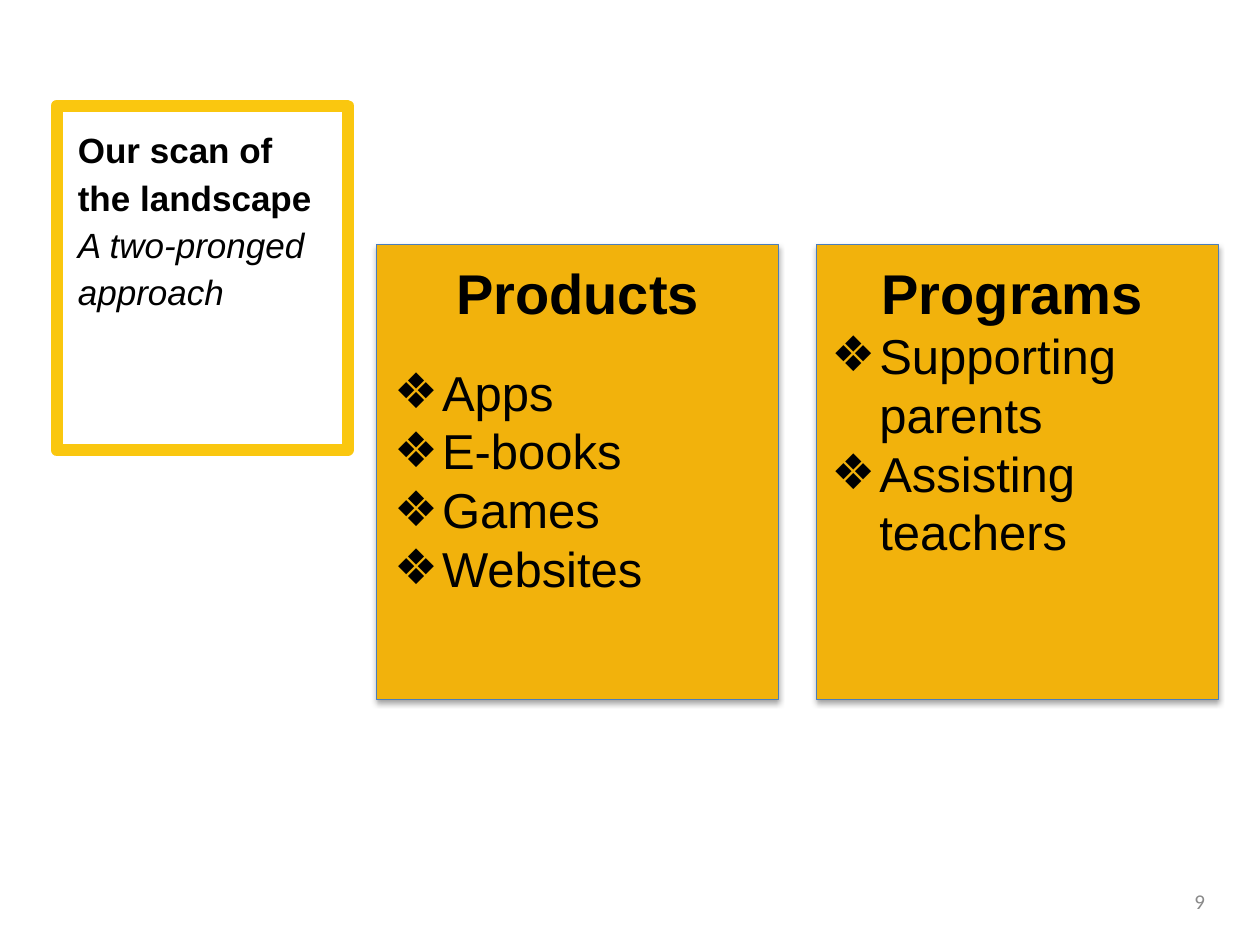
from lxml.etree import SubElement
from pptx import Presentation
from pptx.dml.color import RGBColor
from pptx.enum.shapes import MSO_SHAPE as Shape
from pptx.enum.text import MSO_ANCHOR as Anchor, PP_ALIGN as Align
from pptx.oxml.ns import qn
from pptx.util import Pt

BLACK, GREY, WHITE = "000000", "898989", "FFFFFF"
YELLOW, AMBER, BLUE = "FAC70F", "F2B20C", "4B7EBC"
PANEL_TOP, PANEL_WIDTH, PANEL_HEIGHT = 139.7, 229.7, 259.9
PANELS = [
    (215.3, 195.1, 270, "Products", 21, ["Apps", "E-books", "Games", "Websites"]),
    (466.6, 445, 267.1, "Programs", 0, ["Supporting parents", "Assisting teachers"]),
]


def color(value):
    return RGBColor.from_string(value)


def add_rectangle(page, bounds, line, weight, fill=None):
    box = page.shapes.add_shape(Shape.RECTANGLE, *map(Pt, bounds))
    box.shadow.inherit = False
    if fill:
        box.fill.solid()
        box.fill.fore_color.rgb = color(fill)
    else:
        box.fill.background()
    box.line.color.rgb = color(line)
    box.line.width = Pt(weight)
    return box


def round_corners(box):
    SubElement(box.line._get_or_add_ln(), qn("a:round"))


def add_shadow(box):
    effects = box._element.spPr.find(qn("a:effectLst"))
    shadow = SubElement(effects, qn("a:outerShdw"), blurRad=str(Pt(3.1)),
                        dist=str(Pt(1.8)), dir="5400000", rotWithShape="0")
    tint = SubElement(shadow, qn("a:srgbClr"), val=BLACK)
    SubElement(tint, qn("a:alpha"), val="35000")


def add_text_box(page, bounds):
    frame = page.shapes.add_textbox(*map(Pt, bounds)).text_frame
    frame.word_wrap = True
    return frame


def add_paragraph(frame, text, size, bold=False, italic=False,
                  align=Align.LEFT, name="Arial", fill=BLACK):
    first = frame.paragraphs[0]
    para = frame.add_paragraph() if first.runs else first
    para.alignment = align
    span = para.add_run()
    span.text = text
    font = span.font
    font.name, font.size, font.bold, font.italic = name, Pt(size), bold, italic
    font.color.rgb = color(fill)
    return para


def add_bullet(frame, text):
    para = add_paragraph(frame, text, 28)
    para.level = 1
    props = para._p.get_or_add_pPr()
    props.set("marL", str(Pt(50.4)))
    props.set("indent", str(Pt(-27.4)))
    SubElement(props, qn("a:buFont"), typeface="Arial")
    SubElement(props, qn("a:buChar"), char="❖")


def add_heading(page):
    frame = add_text_box(page, (37.4, 67, 150.5, 116.6))
    title = add_paragraph(frame, "Our scan of the landscape", 20, bold=True)
    subtitle = add_paragraph(frame, "A two-pronged approach", 20, italic=True)
    for para in (title, subtitle):
        para.line_spacing = Pt(27)
    round_corners(add_rectangle(page, (32.4, 60.5, 166.3, 196.6), YELLOW, 7))


def add_page_number(page):
    frame = add_text_box(page, (527.8, 500.4, 167.8, 28.8))
    frame.vertical_anchor = Anchor.MIDDLE
    add_paragraph(frame, "9", 12, align=Align.RIGHT, name="Calibri", fill=GREY)


def add_panel_text(page, left, width, title, gap, items):
    frame = add_text_box(page, (left, 144, width, 203.8))
    heading = add_paragraph(frame, title, 32, bold=True, align=Align.CENTER)
    heading.space_after = Pt(gap)
    for item in items:
        add_bullet(frame, item)


def main():
    deck = Presentation()
    deck.slide_width, deck.slide_height = Pt(720), Pt(540)
    page = deck.slides.add_slide(deck.slide_layouts[6])
    page.background.fill.solid()
    page.background.fill.fore_color.rgb = color(WHITE)
    add_heading(page)
    add_page_number(page)
    for left, *_ in PANELS:
        bounds = (left, PANEL_TOP, PANEL_WIDTH, PANEL_HEIGHT)
        add_shadow(add_rectangle(page, bounds, BLUE, 0.75, AMBER))
    for _, *content in PANELS:
        add_panel_text(page, *content)
    deck.save("out.pptx")


if __name__ == "__main__":
    main()
